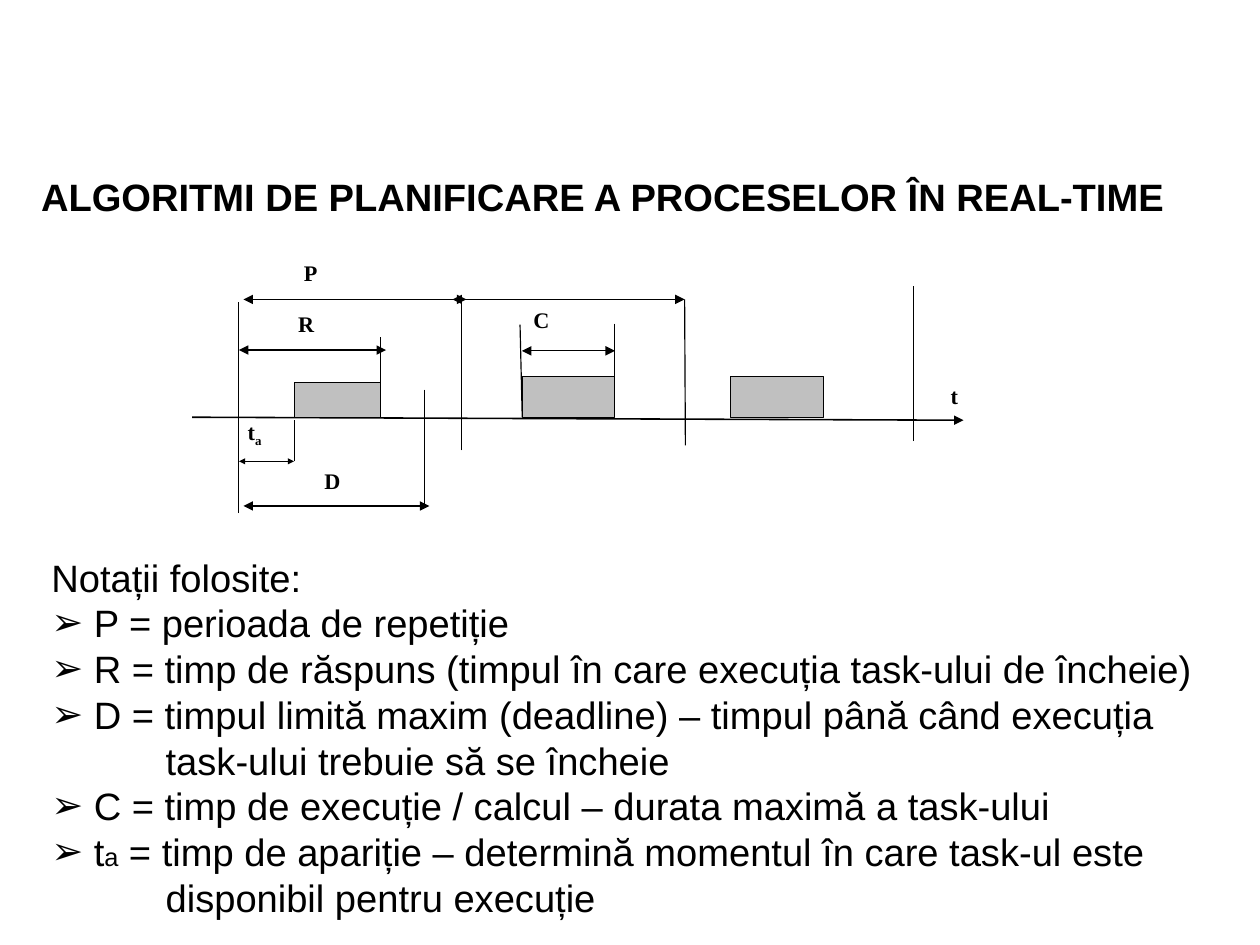
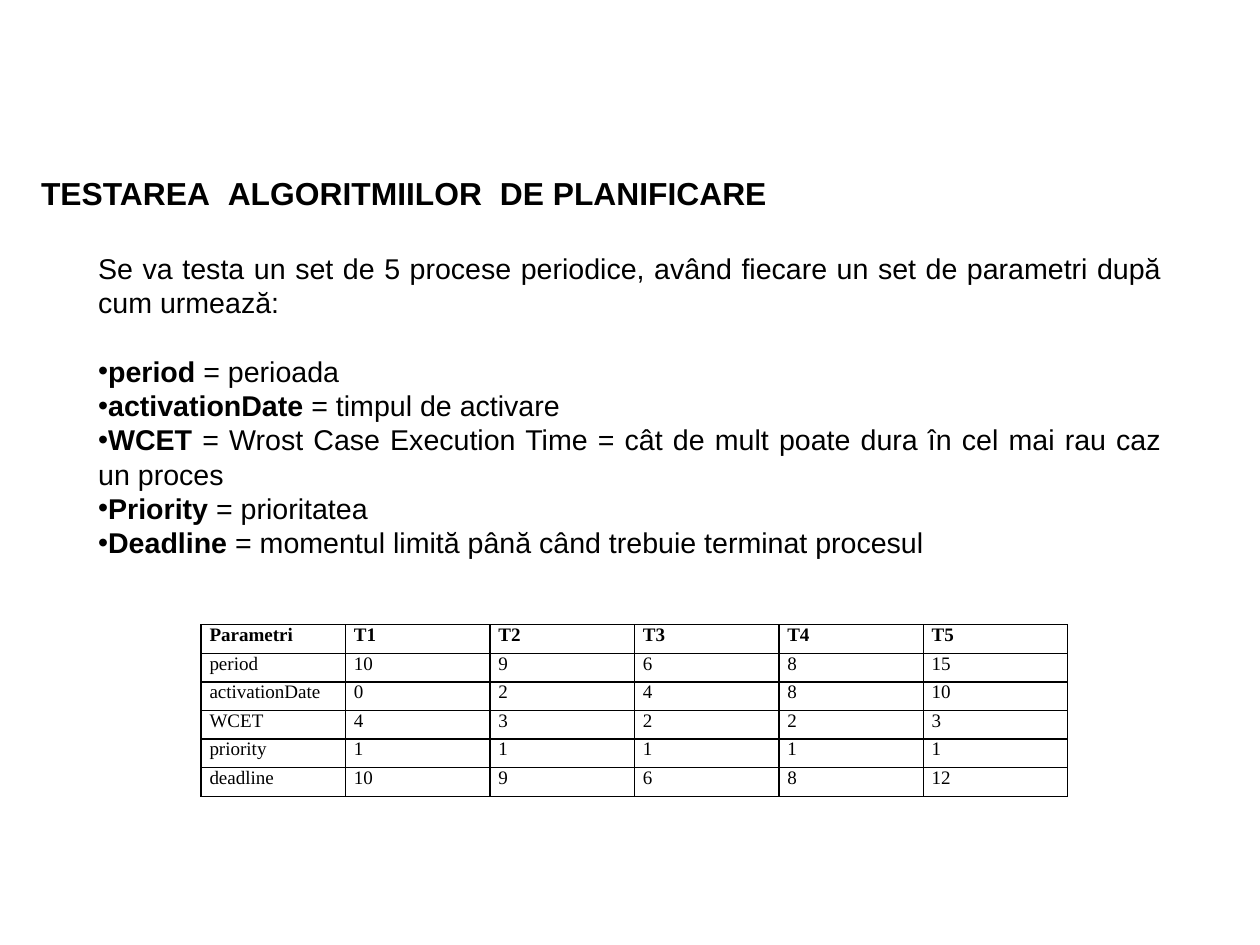
from dataclasses import dataclass
from typing import NamedTuple, Optional

from lxml.etree import SubElement
from pptx import Presentation
from pptx.dml.color import RGBColor
from pptx.enum.shapes import MSO_CONNECTOR as Connector, MSO_SHAPE as Shape
from pptx.enum.text import MSO_ANCHOR as Anchor, MSO_AUTO_SIZE as AutoSize, PP_ALIGN as Align
from pptx.oxml.ns import qn
from pptx.util import Pt


@dataclass(frozen=True)
class Theme:
    ink: RGBColor = RGBColor(0, 0, 0)
    job: RGBColor = RGBColor(0xC0, 0xC0, 0xC0)
    sans: str = "Arial"
    serif: str = "Times New Roman"
    heading: float = 24
    small_heading: float = 20
    notation: float = 24
    notation_index: float = 16
    body: float = 18
    label: float = 14
    cell: float = 12
    leading: float = 1.2
    wide_space: float = 5.56
    hairline: float = 0.75
    rule: float = 1


THEME = Theme()


class Box(NamedTuple):
    left: float
    top: float
    width: float
    height: float


class Piece(NamedTuple):
    text: str
    bold: bool = False
    size: Optional[float] = None
    subscript: bool = False
    tracking: float = 0


class Line(NamedTuple):
    pieces: tuple[Piece, ...]
    bullet: str = ""
    margin: float = 0
    hanging: float = 0
    before: float = 0
    align: Align = Align.LEFT


class Stroke(NamedTuple):
    x1: float
    y1: float
    x2: float
    y2: float


class Span(NamedTuple):
    start: float
    end: float
    y: float
    head: str = "med"


class Label(NamedTuple):
    box: Box
    text: str
    index: str = ""


AXIS = Stroke(121, 262.8, 607, 264.7)
JOBS = (
    Box(185.6, 240.9, 54, 22.3),
    Box(329, 237.3, 58.3, 25.9),
    Box(460.4, 237.3, 58.3, 25.9),
)
MARKERS = (
    Stroke(150.4, 323.2, 150.4, 190.1),
    Stroke(290.7, 283.7, 290.7, 188.6),
    Stroke(431.8, 280.6, 431.3, 188.6),
    Stroke(575.3, 277.9, 575.3, 180),
    Stroke(185.6, 290.7, 185.6, 264.8),
    Stroke(267.6, 245.5, 267.6, 318.7),
    Stroke(387.2, 203.8, 387.2, 255.6),
    Stroke(327.6, 204.5, 329, 262.8),
    Stroke(239.8, 212.4, 239.8, 249.1),
)
SPANS = (
    Span(153.4, 293.8, 188.6),
    Span(285.1, 431.3, 188.6),
    Span(150.5, 243.2, 220.5),
    Span(153.4, 270.5, 318.7),
    Span(328.8, 387.4, 221),
    Span(150.5, 185.3, 290.6, "sm"),
)
LABELS = (
    Label(Box(184.3, 159.8, 82, 39), "P"),
    Label(Box(197.3, 290.9, 82, 39), "D"),
    Label(Box(149, 259.8, 64, 38), "t", "a"),
    Label(Box(329, 189.4, 58.3, 45.4), "C"),
    Label(Box(180.7, 192.2, 56.2, 32.4), "R"),
    Label(Box(591.8, 237.3, 43.9, 32.4), "t"),
)


def notation(*pieces: Piece) -> Line:
    return Line(pieces, bullet="➢", margin=26.7, hanging=26.7)


def continuation(text: str) -> Line:
    return Line((Piece(text),), margin=72)


NOTATIONS = (
    Line((Piece("Notații folosite:"),)),
    notation(Piece("P = perioada de repetiție")),
    notation(Piece("R = timp de răspuns (timpul în care execuția task-ului de încheie)")),
    notation(Piece("D = timpul limită maxim (deadline) – timpul până când execuția")),
    continuation("task-ului trebuie să se încheie"),
    notation(Piece("C = timp de execuție / calcul – durata maximă a task-ului")),
    notation(
        Piece("t"),
        Piece("a", size=THEME.notation_index),
        Piece(" = timp de apariție – determină momentul în care task-ul este"),
    ),
    continuation("disponibil pentru execuție"),
)
WIDE_SPACE = Piece(" ", bold=True, tracking=THEME.wide_space)
PLANNING_HEADING = (Piece("ALGORITMI DE PLANIFICARE A PROCESELOR ÎN REAL-TIME", bold=True),)
TESTING_HEADING = (
    Piece("TESTAREA", bold=True),
    WIDE_SPACE,
    Piece("ALGORITMIILOR", bold=True),
    WIDE_SPACE,
    Piece("DE PLANIFICARE", bold=True),
)
INTRO = "Se va testa un set de 5 procese periodice, având fiecare un set de parametri după cum urmează:"
MEANINGS = (
    ("period", "perioada"),
    ("activationDate", "timpul de activare"),
    ("WCET", "Wrost Case Execution Time = cât de mult poate dura în cel mai rau caz un proces"),
    ("Priority", "prioritatea"),
    ("Deadline", "momentul limită până când trebuie terminat procesul"),
)
TASKS = (
    ("Parametri", "T1", "T2", "T3", "T4", "T5"),
    ("period", "10", "9", "6", "8", "15"),
    ("activationDate", "0", "2", "4", "8", "10"),
    ("WCET", "4", "3", "2", "2", "3"),
    ("priority", "1", "1", "1", "1", "1"),
    ("deadline", "10", "9", "6", "8", "12"),
)


def add_piece(paragraph, piece: Piece, font: str, size: float) -> None:
    run = paragraph.add_run()
    run.text = piece.text
    run.font.name = font
    run.font.size = Pt(piece.size or size)
    run.font.bold = piece.bold
    run.font.color.rgb = THEME.ink
    if piece.subscript:
        run._r.get_or_add_rPr().set("baseline", "-25000")
    if piece.tracking:
        run._r.get_or_add_rPr().set("spc", str(round(piece.tracking * 100)))


def add_text(shapes, box: Box, lines: tuple[Line, ...], size: float, font: str = THEME.sans,
             wrap: bool = True, anchor: Anchor = Anchor.TOP, leading: Optional[float] = None) -> None:
    frame = shapes.add_textbox(*map(Pt, box)).text_frame
    frame.word_wrap = wrap
    frame.auto_size = AutoSize.NONE
    frame.vertical_anchor = anchor
    for number, line in enumerate(lines):
        paragraph = frame.add_paragraph() if number else frame.paragraphs[0]
        paragraph.alignment = line.align
        if leading:
            paragraph.line_spacing = Pt(size * leading)
        if line.before:
            paragraph.space_before = Pt(line.before)
        properties = paragraph._p.get_or_add_pPr()
        properties.set("marL", str(Pt(line.margin)))
        properties.set("indent", str(Pt(-line.hanging)))
        if line.bullet:
            SubElement(properties, qn("a:buFont"), typeface=THEME.sans)
            SubElement(properties, qn("a:buChar"), char=line.bullet)
        for piece in line.pieces:
            add_piece(paragraph, piece, font, size)


def add_heading(slide, pieces: tuple[Piece, ...], width: float, size: float) -> None:
    add_text(slide.shapes, Box(18.8, 105.8, width, 36), (Line(pieces),),
             size, wrap=False, leading=THEME.leading)


def add_stroke(shapes, stroke: Stroke, weight: float = THEME.hairline,
               arrows: tuple[str, ...] = (), head: str = "med") -> None:
    connector = shapes.add_connector(Connector.STRAIGHT, *map(Pt, stroke))
    connector.line.color.rgb = THEME.ink
    connector.line.width = Pt(weight)
    outline = connector.line._get_or_add_ln()
    for arrow in arrows:
        SubElement(outline, qn(arrow), type="triangle", w=head, len=head)
    SubElement(connector._element.spPr, qn("a:effectLst"))


def add_job(shapes, box: Box) -> None:
    job = shapes.add_shape(Shape.RECTANGLE, *map(Pt, box))
    job.shadow.inherit = False
    job.fill.solid()
    job.fill.fore_color.rgb = THEME.job
    job.line.color.rgb = THEME.ink
    job.line.width = Pt(THEME.hairline)


def add_label(shapes, label: Label) -> None:
    pieces = [Piece(label.text, bold=True)]
    if label.index:
        pieces.append(Piece(label.index, bold=True, subscript=True))
    add_text(shapes, label.box, (Line(tuple(pieces)),), THEME.label, THEME.serif)


def add_timeline(slide) -> None:
    shapes = slide.shapes.add_group_shape().shapes
    add_stroke(shapes, AXIS, THEME.rule, ("a:tailEnd",))
    for job in JOBS:
        add_job(shapes, job)
    for marker in MARKERS:
        add_stroke(shapes, marker)
    for span in SPANS:
        add_stroke(shapes, Stroke(span.start, span.y, span.end, span.y),
                   arrows=("a:headEnd", "a:tailEnd"), head=span.head)
    for label in LABELS:
        add_label(shapes, label)


def fill_cell(cell, piece: Piece) -> None:
    cell.margin_left = cell.margin_right = Pt(5.3)
    cell.margin_top = cell.margin_bottom = Pt(0)
    paragraph = cell.text_frame.paragraphs[0]
    paragraph.alignment = Align.JUSTIFY
    add_piece(paragraph, piece, THEME.serif, THEME.cell)
    properties = cell._tc.get_or_add_tcPr()
    for side in ("a:lnL", "a:lnR", "a:lnT", "a:lnB"):
        border = SubElement(properties, qn(side), w=str(Pt(THEME.rule)))
        SubElement(SubElement(border, qn("a:solidFill")), qn("a:srgbClr"), val=str(THEME.ink))
    cell.fill.background()


def add_task_table(slide) -> None:
    box = Box(126.7, 393.5, 546, 108)
    table = slide.shapes.add_table(len(TASKS), len(TASKS[0]), *map(Pt, box)).table
    table.horz_banding = False
    for row, values in enumerate(TASKS):
        for column, value in enumerate(values):
            fill_cell(table.cell(row, column), Piece(value, bold=row == 0))


def build_notation_slide(slide) -> None:
    add_heading(slide, PLANNING_HEADING, 728.6, THEME.heading)
    add_timeline(slide)
    add_text(slide.shapes, Box(25.3, 345.5, 743.8, 239.8), NOTATIONS, THEME.notation,
             leading=THEME.leading)


def build_testing_slide(slide) -> None:
    gap = THEME.body * THEME.leading
    lines = [Line((Piece(INTRO),), align=Align.JUSTIFY)]
    for number, (term, meaning) in enumerate(MEANINGS):
        lines.append(Line((Piece(term, bold=True), Piece(f" = {meaning}")), bullet="•",
                          before=0 if number else gap, align=Align.JUSTIFY))
    add_text(slide.shapes, Box(54.8, 153.3, 684, 203.8), tuple(lines), THEME.body,
             anchor=Anchor.MIDDLE, leading=THEME.leading)
    add_heading(slide, TESTING_HEADING, 474.5, THEME.small_heading)
    add_task_table(slide)


def main() -> None:
    deck = Presentation()
    deck.slide_width, deck.slide_height = Pt(793.75), Pt(595.25)
    for build in (build_notation_slide, build_testing_slide):
        build(deck.slides.add_slide(deck.slide_layouts[6]))
    deck.save("out.pptx")


if __name__ == "__main__":
    main()
